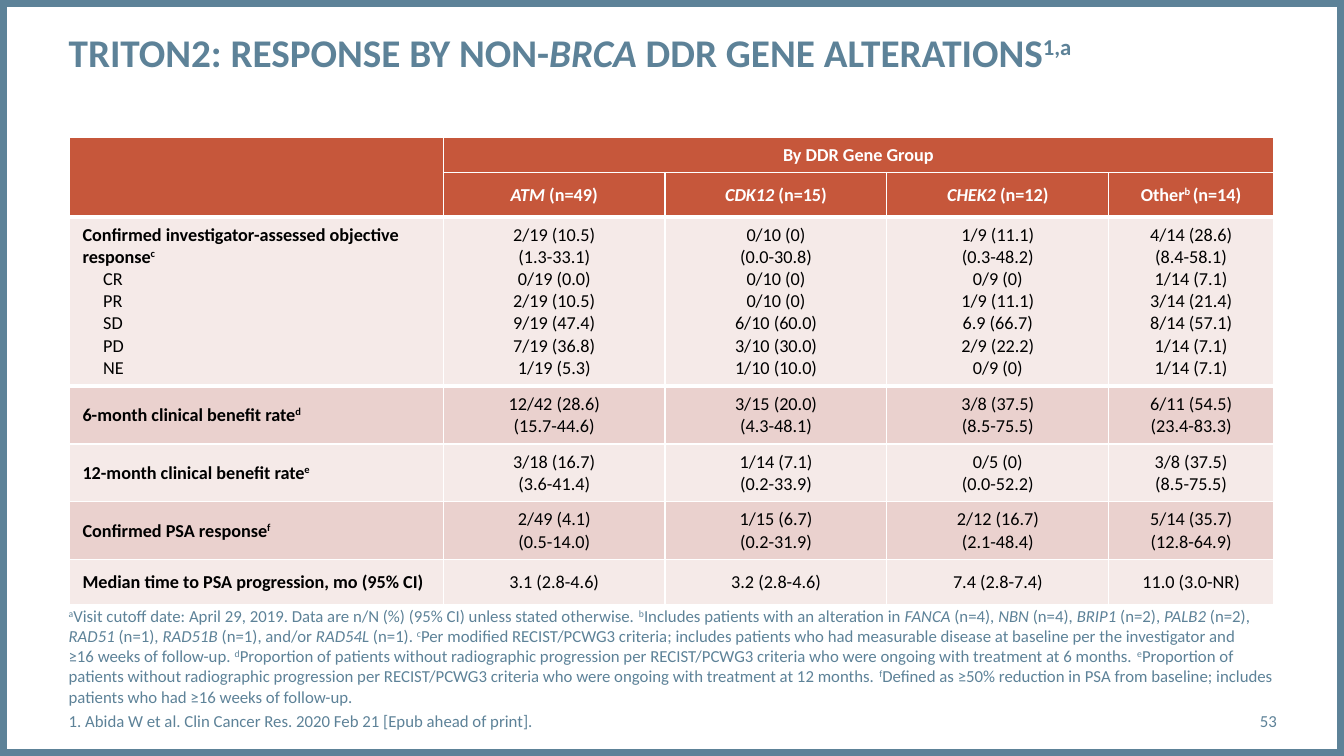
import dataclasses
import lxml.etree
import pptx
import pptx.dml.color
import pptx.enum.shapes
import pptx.enum.text
import pptx.oxml.ns
import pptx.util

Cm = pptx.util.Cm
Pt = pptx.util.Pt
RGB = pptx.dml.color.RGBColor
ALIGN = pptx.enum.text.PP_ALIGN
ANCHOR = pptx.enum.text.MSO_ANCHOR
qn = pptx.oxml.ns.qn


@dataclasses.dataclass(frozen=True)
class Theme:
    font: str = "Calibri"
    slate: str = "5D8298"
    header: str = "C6573B"
    light: str = "F5EAE8"
    dark: str = "EAD1CE"
    white: str = "FFFFFF"
    black: str = "000000"
    title_size: int = 28
    table_size: int = 13
    note_size: int = 12


theme = Theme()


def write(p, text, size, color, bold=False):
    for i, level in enumerate(text.split("^")):
        for j, style in enumerate(level.split("*")):
            for k, line in enumerate(style.split("\n")):
                if k:
                    p.add_line_break()
                if not line:
                    continue
                r = p.add_run()
                r.text = line
                r.font.name = theme.font
                r.font.size = Pt(size)
                r.font.bold = bold
                r.font.italic = j % 2 == 1
                r.font.color.rgb = RGB.from_string(color)
                if i % 2:
                    r.font._element.set("baseline", "30000")


def place(sp, left, top, width, height, anchor):
    sp.left, sp.top, sp.width, sp.height = Cm(left), Cm(top), Cm(width), Cm(height)
    tf = sp.text_frame
    tf.word_wrap = True
    tf.auto_size = pptx.enum.text.MSO_AUTO_SIZE.NONE
    tf.vertical_anchor = anchor
    tf.margin_left = tf.margin_right = tf.margin_top = tf.margin_bottom = 0
    return tf


prs = pptx.Presentation()
prs.slide_width, prs.slide_height = Cm(33.87), Cm(19.05)
s = prs.slides.add_slide(prs.slide_layouts[1])
title, notes = s.shapes.title, s.placeholders[1]

frame = s.shapes.add_shape(pptx.enum.shapes.MSO_SHAPE.RECTANGLE, 0, 0, prs.slide_width, prs.slide_height)
frame.shadow.inherit = False
frame.fill.background()
frame.line.color.rgb = RGB.from_string(theme.slate)
frame.line.width = Pt(10)
title._element.addprevious(frame._element)

tf = place(title, 1.73, 0.71, 26.21, 2.39, ANCHOR.TOP)
p = tf.paragraphs[0]
p.alignment = ALIGN.LEFT
write(p, "TRITON2: RESPONSE BY NON-*BRCA* DDR GENE ALTERATIONS^1,a^", theme.title_size, theme.slate, True)

footnotes = [
    "^a^Visit cutoff date: April 29, 2019. Data are n/N (%) (95% CI) unless stated otherwise. "
    "^b^Includes patients with an alteration in *FANCA* (n=4), *NBN* (n=4), *BRIP1* (n=2), "
    "*PALB2 *(n=2), *RAD51 *(n=1), *RAD51B* (n=1), and/or *RAD54L* (n=1). "
    "^c^Per modified RECIST/PCWG3 criteria; includes patients who had measurable disease at baseline "
    "per the investigator and \n≥16 weeks of follow-up. "
    "^d^Proportion of patients without radiographic progression per RECIST/PCWG3 criteria "
    "who were ongoing with treatment at 6 months. "
    "^e^Proportion of patients without radiographic progression per RECIST/PCWG3 criteria "
    "who were ongoing with treatment at 12 months. "
    "^f^Defined as ≥50% reduction in PSA from baseline; includes patients who had ≥16 weeks of follow-up.",
    "1. Abida W et al. Clin Cancer Res. 2020 Feb 21 [Epub ahead of print].",
]
tf = place(notes, 1.73, 15.24, 30.38, 3.2, ANCHOR.MIDDLE)
for i, text in enumerate(footnotes):
    p = tf.add_paragraph() if i else tf.paragraphs[0]
    pPr = p._p.get_or_add_pPr()
    pPr.set("marL", "0")
    pPr.set("indent", "0")
    lxml.etree.SubElement(pPr, qn("a:buNone"))
    p.alignment = ALIGN.LEFT
    p.space_before = Pt(3 * i)
    write(p, text, theme.note_size, theme.slate)

rows = [
    ["", "By DDR Gene Group", "", "", ""],
    ["", "*ATM* (n=49)", "*CDK12* (n=15)", "*CHEK2* (n=12)", "Other^b ^(n=14)"],
    ["Confirmed investigator-assessed objective response^c^|CR|PR|SD|PD|NE",
     "2/19 (10.5)|(1.3-33.1)|0/19 (0.0)|2/19 (10.5)|9/19 (47.4)|7/19 (36.8)|1/19 (5.3)",
     "0/10 (0)|(0.0-30.8)|0/10 (0)|0/10 (0)|6/10 (60.0)|3/10 (30.0)|1/10 (10.0)",
     "1/9 (11.1)|(0.3-48.2)|0/9 (0)|1/9 (11.1)|6.9 (66.7)|2/9 (22.2)|0/9 (0)",
     "4/14 (28.6)|(8.4-58.1)|1/14 (7.1)|3/14 (21.4)|8/14 (57.1)|1/14 (7.1)|1/14 (7.1)"],
    ["6-month clinical benefit rate^d^", "12/42 (28.6)|(15.7-44.6)", "3/15 (20.0)|(4.3-48.1)",
     "3/8 (37.5)|(8.5-75.5)", "6/11 (54.5)|(23.4-83.3)"],
    ["12-month clinical benefit rate^e^", "3/18 (16.7)|(3.6-41.4)", "1/14 (7.1)|(0.2-33.9)",
     "0/5 (0)|(0.0-52.2)", "3/8 (37.5)|(8.5-75.5)"],
    ["Confirmed PSA response^f^", "2/49 (4.1)|(0.5-14.0)", "1/15 (6.7)|(0.2-31.9)",
     "2/12 (16.7)|(2.1-48.4)", "5/14 (35.7)|(12.8-64.9)"],
    ["Median time to PSA progression, mo (95% CI)", "3.1 (2.8-4.6)", "3.2 (2.8-4.6)",
     "7.4 (2.8-7.4)", "11.0 (3.0-NR)"],
]
widths = [9.42, 5.59, 5.59, 5.59, 4.15]
heights = [0.9, 0.9, 4.26, 1.46, 1.46, 1.46, 1.12]
fills = [theme.header] * 2 + [theme.light, theme.dark] * 2 + [theme.light]
rules = [1, 1, 3, 3, 1, 1, 1, 1]

table = s.shapes.add_table(len(rows), len(widths), Cm(1.75), Cm(3.45),
                           Cm(sum(widths)), Cm(sum(heights))).table
for column, width in zip(table.columns, widths):
    column.width = Cm(width)
for row, height in zip(table.rows, heights):
    row.height = Cm(height)
table.cell(0, 0).merge(table.cell(1, 0))
table.cell(0, 1).merge(table.cell(0, 4))

for y, row in enumerate(rows):
    for x, text in enumerate(row):
        cell = table.cell(y, x)
        cell.margin_left = cell.margin_right = Cm(0.33)
        cell.margin_top = cell.margin_bottom = Cm(0.17)
        cell.vertical_anchor = ANCHOR.MIDDLE
        bottom = 3 if (y, x) == (0, 0) else rules[y + 1]
        tcPr = cell._tc.get_or_add_tcPr()
        for side, weight in zip("LRTB", (1, 1, rules[y], bottom)):
            ln = lxml.etree.SubElement(tcPr, qn("a:ln" + side), w=str(Pt(weight)))
            solid = lxml.etree.SubElement(ln, qn("a:solidFill"))
            lxml.etree.SubElement(solid, qn("a:srgbClr"), val=theme.white)
        cell.fill.solid()
        cell.fill.fore_color.rgb = RGB.from_string(fills[y])
        if not text:
            continue
        color = theme.white if y < 2 else theme.black
        for i, line in enumerate(text.split("|")):
            p = cell.text_frame.add_paragraph() if i else cell.text_frame.paragraphs[0]
            p.alignment = ALIGN.CENTER if x else ALIGN.LEFT
            if i and x == 0:
                p._p.get_or_add_pPr().set("marL", str(Cm(0.52)))
            write(p, line, theme.table_size, color, y < 2 or (x == 0 and i == 0))

number = s.shapes.add_textbox(0, 0, 0, 0)
tf = place(number, 29.21, 17.65, 2.97, 1.02, ANCHOR.MIDDLE)
p = tf.paragraphs[0]
p.alignment = ALIGN.RIGHT
write(p, "53", theme.note_size, theme.slate)

prs.save("out.pptx")
